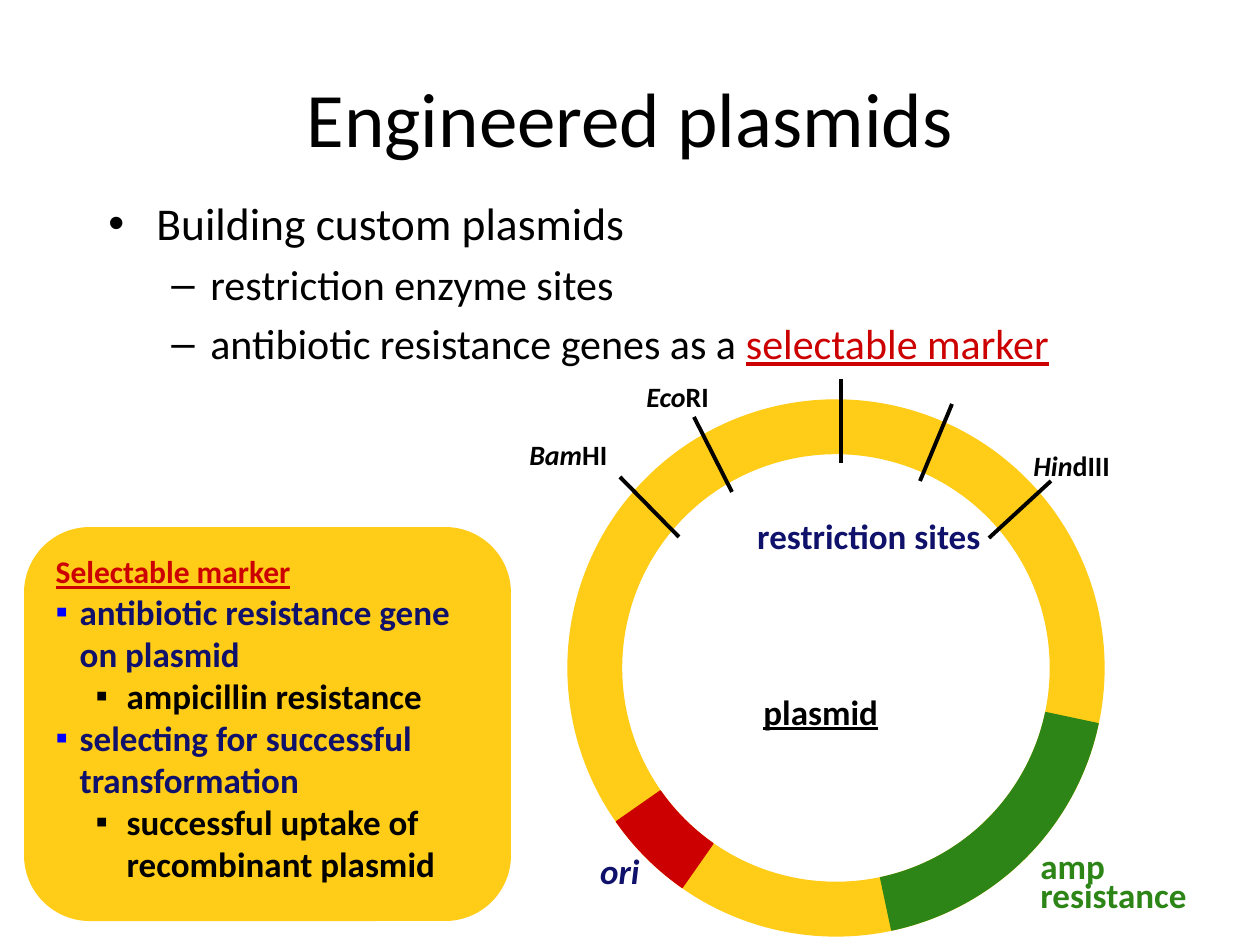
from lxml import etree
from pptx import Presentation
from pptx import util as u
from pptx.dml.color import RGBColor
from pptx.enum import shapes, text
from pptx.oxml.ns import qn

SCALE = 914400 / 126  # EMU in one px
COLORS = {
    "black": "000000", "red": "CC0000", "navy": "0F116A",
    "blue": "0000FF", "green": "2C8516", "yellow": "FFCC18",
}


def write(para, words, size, color, bold=False, italic=False, underline=False):
    """Append one formatted run to the paragraph."""
    span = para.add_run()
    span.text = words
    span.font.name = "Calibri"
    span.font.size = u.Pt(size)
    span.font.bold = bold
    span.font.italic = italic
    span.font.underline = underline
    span.font.color.rgb = RGBColor.from_string(COLORS[color])


def indent(para, left, hang, mark=None, color="black"):
    """Set a hanging indent in px, with a bullet if a mark is given."""
    props = para._p.get_or_add_pPr()
    props.set("marL", str(round(left * SCALE)))
    props.set("indent", str(round(-hang * SCALE)))
    if mark:
        tint = etree.SubElement(props, qn("a:buClr"))
        etree.SubElement(tint, qn("a:srgbClr")).set("val", COLORS[color])
        etree.SubElement(props, qn("a:buFont")).set("typeface", "Arial")
        etree.SubElement(props, qn("a:buChar")).set("char", mark)


deck = Presentation()
deck.slide_width, deck.slide_height = u.Inches(10), u.Inches(7.5)
page = deck.slides.add_slide(deck.slide_layouts[6])

# Title
title = page.shapes.add_textbox(*(round(n * SCALE) for n in (63, 38, 1134, 158)))
title.text_frame.word_wrap = True
title.text_frame.vertical_anchor = text.MSO_ANCHOR.MIDDLE
para = title.text_frame.paragraphs[0]
para.alignment = text.PP_ALIGN.CENTER
write(para, "Engineered plasmids", 44, "black")

# Main points
points = page.shapes.add_textbox(*(round(n * SCALE) for n in (96, 189, 1164, 236)))
points.text_frame.word_wrap = True
point_lines = [
    (0, 48, 48, "•", 26, "Building custom plasmids"),
    (1, 102, 39, "–", 24, "restriction enzyme sites"),
    (1, 102, 39, "–", 24, "antibiotic resistance genes as a "),
]
for i, (level, left, hang, mark, size, words) in enumerate(point_lines):
    para = points.text_frame.paragraphs[0] if i == 0 else points.text_frame.add_paragraph()
    para.level = level
    para.space_before = u.Pt(5)
    indent(para, left, hang, mark)
    write(para, words, size, "black")
write(para, "selectable marker", 24, "red", underline=True)

# Selectable marker panel
panel = page.shapes.add_shape(
    shapes.MSO_SHAPE.ROUNDED_RECTANGLE,
    *(round(n * SCALE) for n in (24, 527, 487, 394)))
panel.adjustments[0] = 0.167
panel.shadow.inherit = False
panel.fill.solid()
panel.fill.fore_color.rgb = RGBColor.from_string(COLORS["yellow"])
panel.line.fill.background()
panel.text_frame.word_wrap = True
panel.text_frame.vertical_anchor = text.MSO_ANCHOR.TOP
para = panel.text_frame.paragraphs[0]
para.alignment = text.PP_ALIGN.LEFT
indent(para, 24, 24)
write(para, "Selectable marker", 18, "red", bold=True, underline=True)
panel_lines = [
    (0, "antibiotic resistance gene on plasmid"),
    (1, "ampicillin resistance"),
    (0, "selecting for successful transformation"),
    (1, "successful uptake of recombinant plasmid"),
]
for level, words in panel_lines:
    para = panel.text_frame.add_paragraph()
    para.alignment = text.PP_ALIGN.LEFT
    para.level = level
    left, hang, bullet_color, color = [
        (24, 24, "blue", "navy"), (71, 31, "black", "black")][level]
    indent(para, left, hang, "▪", bullet_color)
    write(para, words, 20, color, bold=True)

# Plasmid ring and its two genes; angles run clockwise from three o'clock
ring_parts = [
    ("DONUT", "yellow", []),
    ("BLOCK_ARC", "green", [12, 78]),
    ("BLOCK_ARC", "red", [125, 145]),
]
for kind, color, angles in ring_parts:
    part = page.shapes.add_shape(
        shapes.MSO_SHAPE[kind], *(round(n * SCALE) for n in (568, 400, 536, 536)))
    for i, angle in enumerate(angles):
        part.adjustments[i] = angle * 0.6  # 60000 units a degree, over 100000
    part.adjustments[len(angles)] = 0.1
    part.shadow.inherit = False
    part.fill.solid()
    part.fill.fore_color.rgb = RGBColor.from_string(COLORS[color])
    part.line.color.rgb = RGBColor.from_string(COLORS[color])
    part.line.width = u.Pt(0.75)

# Restriction site ticks
ticks = [
    (620, 477, 679, 537), (694, 417, 732, 492), (841, 379, 841, 463),
    (952, 404, 920, 481), (1051, 481, 989, 538),
]
for ends in ticks:
    tick = page.shapes.add_connector(
        shapes.MSO_CONNECTOR.STRAIGHT, *(round(n * SCALE) for n in ends))
    tick.line.color.rgb = RGBColor.from_string(COLORS["black"])
    tick.line.width = u.Pt(2.25)
    etree.SubElement(tick._element.spPr, qn("a:effectLst"))

# Labels: place, size, color, italic words, upright words, underline
labels = [
    ((751, 684, 158, 54), 20, "black", "", "plasmid", True),
    ((1028, 849, 199, 72), 20, "green", "", "amp\vresistance", False),
    ((707, 508, 286, 54), 20, "navy", "", "restriction sites", False),
    ((581, 843, 71, 54), 20, "navy", "ori", "", False),
    ((634, 373, 105, 47), 16, "black", "Eco", "RI", False),
    ((517, 431, 113, 47), 16, "black", "Bam", "HI", False),
    ((1021, 442, 111, 47), 16, "black", "Hin", "dIII", False),
]
for place, size, color, slanted, upright, underline in labels:
    label = page.shapes.add_textbox(*(round(n * SCALE) for n in place))
    label.text_frame.word_wrap = False
    label.text_frame.auto_size = text.MSO_AUTO_SIZE.SHAPE_TO_FIT_TEXT
    label.text_frame.vertical_anchor = text.MSO_ANCHOR.MIDDLE
    para = label.text_frame.paragraphs[0]
    if color == "navy":
        para.alignment = text.PP_ALIGN.RIGHT
    if slanted:
        write(para, slanted, size, color, bold=True, italic=True)
    for i, words in enumerate(upright.split("\v") if upright else []):
        if i:
            para.add_line_break()
            para.line_spacing = 0.7
        write(para, words, size, color, bold=True, underline=underline)

deck.save("out.pptx")
